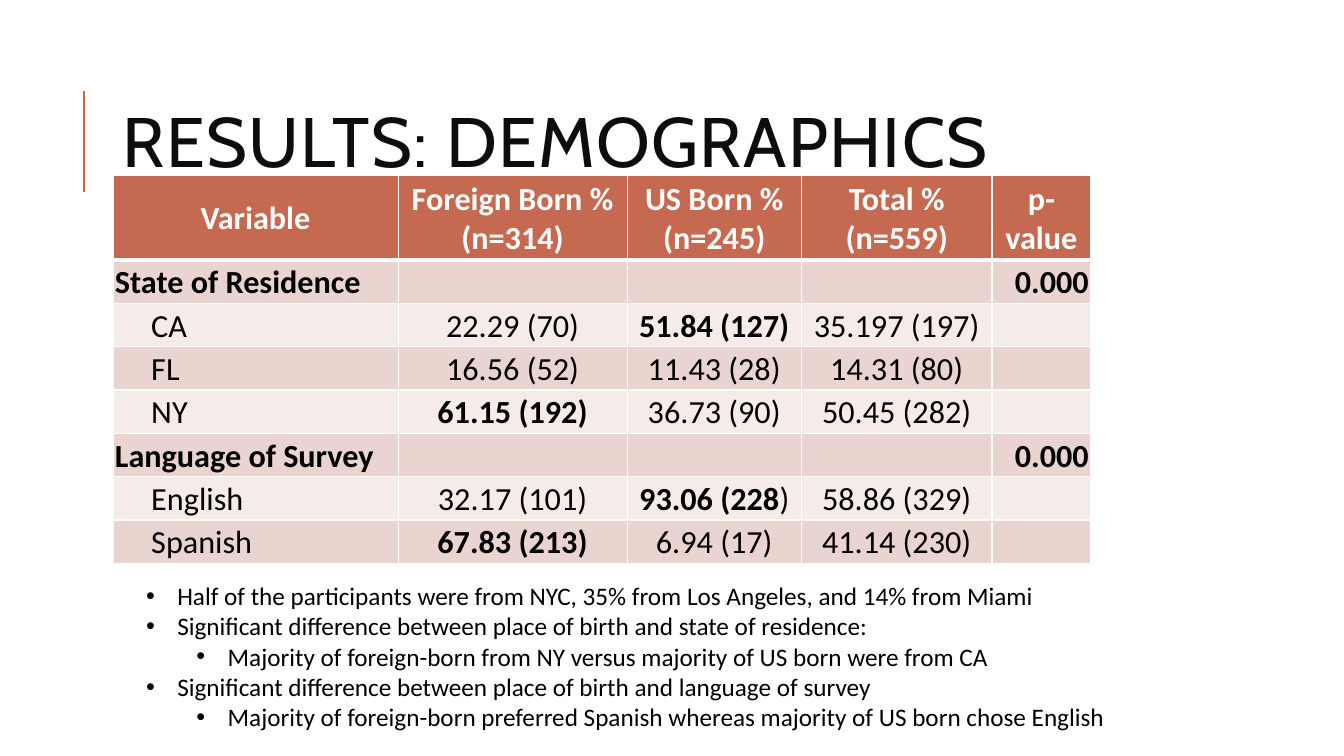
from lxml.etree import SubElement
from pptx import Presentation
from pptx.dml.color import RGBColor
from pptx.enum.shapes import MSO_CONNECTOR
from pptx.enum.text import MSO_ANCHOR, MSO_AUTO_SIZE, PP_ALIGN
from pptx.oxml.ns import qn
from pptx.util import Emu, Pt

PX = 9144  # 100 px to the inch
RUST, BLUSH, PALE, WHITE, BLACK = "C66951", "EAD4D0", "F5EBE9", "FFFFFF", "000000"

# Asterisks enclose bold text; an indented row belongs to the group above it
COLUMN_WIDTHS = [283, 227, 173, 189, 98]
HEADINGS = ["*Variable*", "*Foreign Born %\n(n=314)*", "*US Born %\n(n=245)*",
            "*Total %\n(n=559)*", "*p-value*"]
DEMOGRAPHICS = [
    ["*State of Residence*", "", "", "", "*0.000*"],
    ["CA", "22.29 (70)", "*51.84 (127)*", "35.197 (197)", ""],
    ["FL", "16.56 (52)", "11.43 (28)", "14.31 (80)", ""],
    ["NY", "*61.15 (192)*", "36.73 (90)", "50.45 (282)", ""],
    ["*Language of Survey*", "", "", "", "*0.000*"],
    ["English", "32.17 (101)", "*93.06 (228*)", "58.86 (329)", ""],
    ["Spanish", "*67.83 (213)*", "6.94 (17)", "41.14 (230)", ""],
]
FINDINGS = [
    (0, "Half of the participants were from NYC, 35% from Los Angeles, and 14% from Miami"),
    (0, "Significant difference between place of birth and state of residence:"),
    (1, "Majority of foreign-born from NY versus majority of US born were from CA"),
    (0, "Significant difference between place of birth and language of survey"),
    (1, "Majority of foreign-born preferred Spanish whereas majority of US born chose English"),
]


def px(length):
    return Emu(length * PX)


def rgb(color):
    return RGBColor.from_string(color)


def write(paragraph, text, size=18, font="Calibri", color=BLACK,
          align=PP_ALIGN.LEFT, spacing=None):
    paragraph.alignment = align
    for part, piece in enumerate(text.split("*")):
        for row, line in enumerate(piece.split("\n")):
            if row:
                paragraph.add_line_break()
            if not line:
                continue
            run = paragraph.add_run()
            run.text = line
            run.font.size = Pt(size)
            run.font.name = font
            run.font.bold = part % 2 == 1
            run.font.color.rgb = rgb(color)
            if spacing:
                run.font._element.set("spc", str(spacing))


def add_text_frame(slide, left, top, width, height):
    frame = slide.shapes.add_textbox(px(left), px(top), px(width), px(height)).text_frame
    frame.word_wrap = True
    return frame


def add_title(slide, text):
    frame = add_text_frame(slide, 112, 64, 1063, 164)
    frame.vertical_anchor = MSO_ANCHOR.MIDDLE
    heading = frame.paragraphs[0]
    heading.line_spacing = 0.8
    write(heading, text, size=50, font="Cabin", color="0D0D0D", spacing=100)


def add_accent_line(slide):
    accent = slide.shapes.add_connector(MSO_CONNECTOR.STRAIGHT, px(83), px(190), px(83), px(90))
    accent.line.color.rgb = rgb(RUST)
    accent.line.width = Pt(1.5)
    SubElement(accent._element.spPr, qn("a:effectLst"))


def add_borders(cell, bottom):
    properties = cell._tc.get_or_add_tcPr()
    for side, width in [("L", 1), ("R", 1), ("T", 1), ("B", bottom)]:
        border = SubElement(properties, qn(f"a:ln{side}"), w=str(Pt(width)))
        fill = SubElement(border, qn("a:solidFill"))
        SubElement(fill, qn("a:srgbClr"), val=WHITE)


def fill_cell(cell, text, fill, color, align, indent, bottom):
    add_borders(cell, bottom)
    cell.fill.solid()
    cell.fill.fore_color.rgb = rgb(fill)
    cell.vertical_anchor = MSO_ANCHOR.MIDDLE
    cell.margin_left = px(2 + indent)
    cell.margin_right = cell.margin_top = px(2)
    cell.margin_bottom = 0
    write(cell.text_frame.paragraphs[0], text, size=23, color=color, align=align)


def add_demographics_table(slide):
    rows = [HEADINGS] + DEMOGRAPHICS
    table = slide.shapes.add_table(len(rows), len(COLUMN_WIDTHS), px(112), px(174),
                                   px(sum(COLUMN_WIDTHS)), px(385)).table
    for column, width in zip(table.columns, COLUMN_WIDTHS):
        column.width = px(width)
    body_aligns = [PP_ALIGN.LEFT] + [PP_ALIGN.CENTER] * 3 + [PP_ALIGN.RIGHT]
    for r, values in enumerate(rows):
        header = r == 0
        table.rows[r].height = px(84 if header else 43)
        fill = RUST if header else BLUSH if r % 2 else PALE
        for c, value in enumerate(values):
            in_group = c == 0 and not value.startswith("*")
            fill_cell(table.cell(r, c), value, fill,
                      color=WHITE if header else BLACK,
                      align=PP_ALIGN.CENTER if header else body_aligns[c],
                      indent=36 if in_group else 0,
                      bottom=3 if header else 1)


def add_findings(slide):
    frame = add_text_frame(slide, 135, 571, 1009, 192)
    frame.auto_size = MSO_AUTO_SIZE.SHAPE_TO_FIT_TEXT
    for number, (level, finding) in enumerate(FINDINGS):
        paragraph = frame.add_paragraph() if number else frame.paragraphs[0]
        paragraph.level = level
        write(paragraph, finding)
        properties = paragraph._p.get_or_add_pPr()
        properties.set("marL", str(px(31 + 50 * level)))
        properties.set("indent", str(px(-31)))
        SubElement(properties, qn("a:buFont"), typeface="Arial")
        SubElement(properties, qn("a:buChar"), char="•")


def main():
    presentation = Presentation()
    presentation.slide_width, presentation.slide_height = px(1333), px(750)
    slide = presentation.slides.add_slide(presentation.slide_layouts[6])

    # Heading
    add_accent_line(slide)
    add_title(slide, "RESULTS: DEMOGRAPHICS")

    # Results and what they show
    add_demographics_table(slide)
    add_findings(slide)

    presentation.save("out.pptx")


if __name__ == "__main__":
    main()
